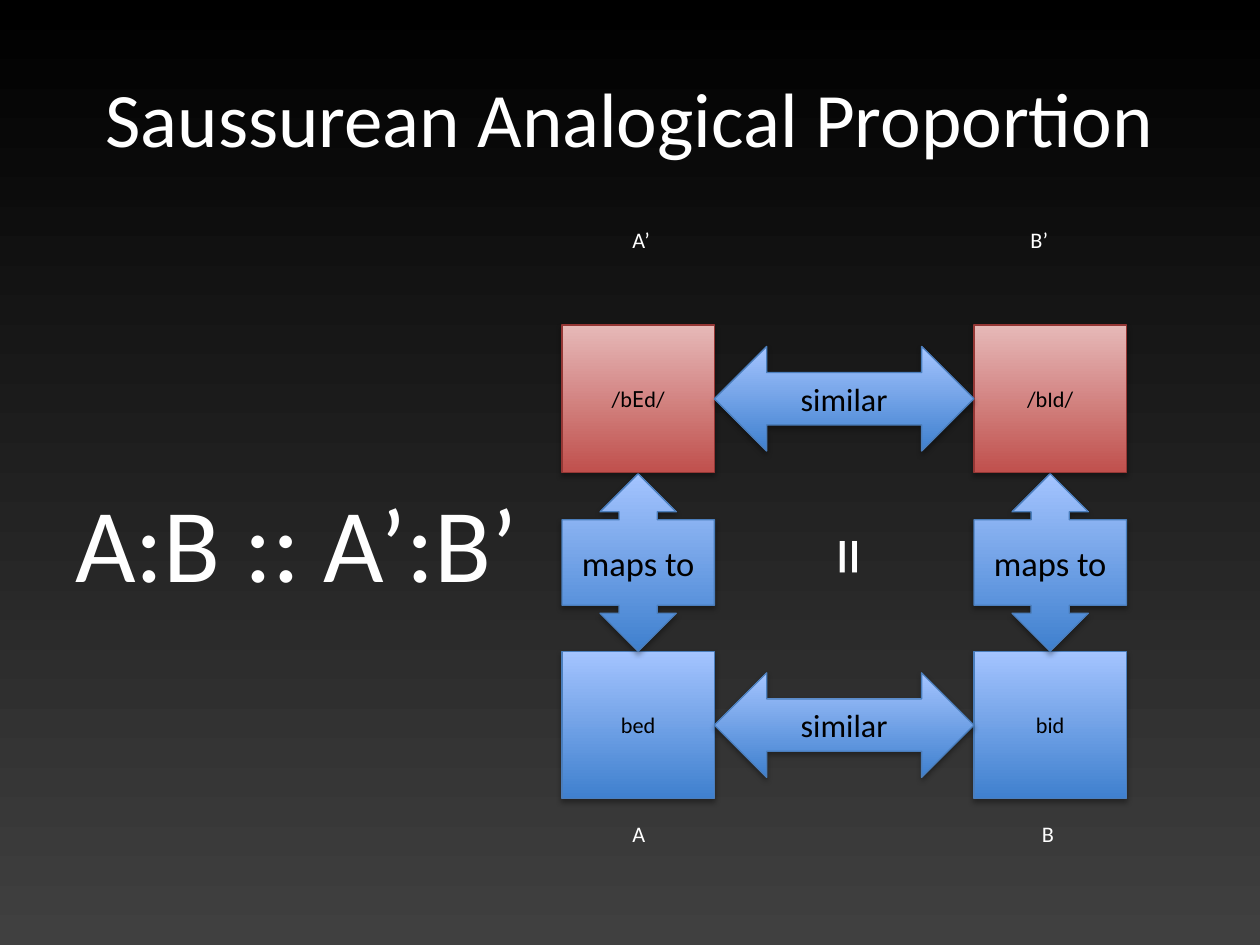
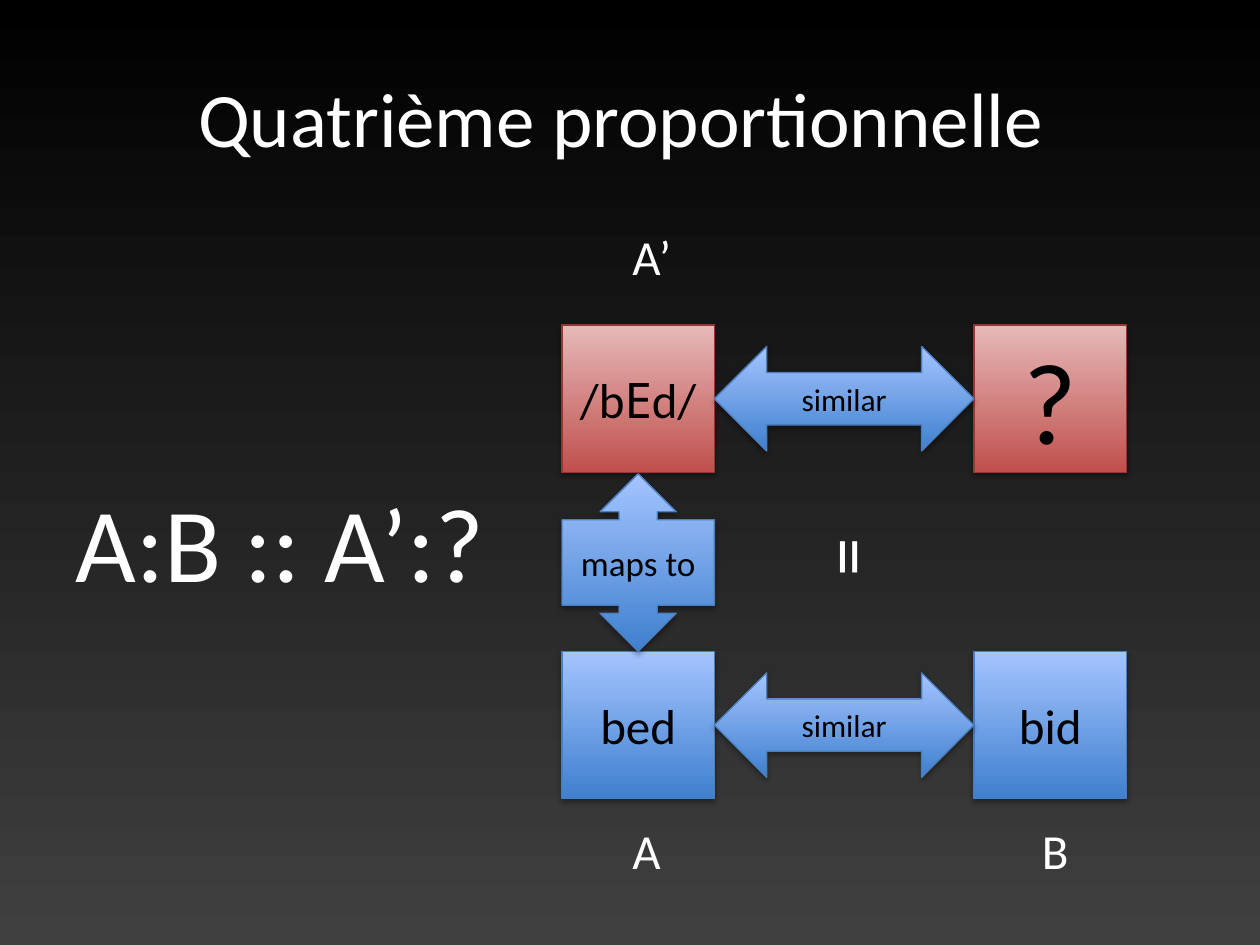
"""Two slides on analogical proportion, each with a square of mapped forms."""
from lxml import etree
from pptx import Presentation
from pptx import util as u
from pptx.dml.color import RGBColor
from pptx.enum import shapes, text
from pptx.oxml.ns import qn

INK = {
    "white": "FFFFFF", "black": "000000", "gray": "404040",
    "blue": "3F80CE", "sky": "A4C4FF", "edge": "4B7EBC",
    "red": "C0504D", "rose": "E6B9B8", "rust": "953735",
}
BLUE = ("blue", "sky", "edge")
RED = ("red", "rose", "rust")
FONT, ALT = "Calibri", "Noto Sans"
KIND = shapes.MSO_SHAPE
SIDE, TALL = 1.21, 1.17
GAP, RISE = 2.06, 1.42
BED = ("/b", ("E", ALT), "d/")


def ink(name):
    """Return the named colour."""
    return RGBColor.from_string(INK[name])


def shade(fill, low, high):
    """Blend a fill from low at the bottom to high at the top."""
    fill.gradient()
    fill.gradient_angle = 90
    for stop, name in zip(fill.gradient_stops, (low, high)):
        stop.color.rgb = ink(name)


def write(shape, words, size=18, color="white", align="CENTER", anchor="MIDDLE",
          wrap=True, top=0.05, vert=None):
    """Fill a shape with one paragraph of words, or of (words, font) runs."""
    frame = shape.text_frame
    frame.word_wrap = wrap
    frame.vertical_anchor = getattr(text.MSO_ANCHOR, anchor)
    frame.margin_top = u.Inches(top)
    if vert:
        frame._txBody.bodyPr.set("vert", vert)
    para = frame.paragraphs[0]
    para.alignment = getattr(text.PP_ALIGN, align)
    for part in [words] if isinstance(words, str) else words:
        run = para.add_run()
        run.text, run.font.name = (part, FONT) if isinstance(part, str) else part
        run.font.size = u.Pt(size)
        run.font.color.rgb = ink(color)


def label(slide, box, words, **form):
    """Place a text box."""
    write(slide.shapes.add_textbox(*map(u.Inches, box)), words, **form)


def drop(shape):
    """Give a shape a soft shadow below it."""
    shape.shadow.inherit = False
    glow = etree.SubElement(
        shape._element.spPr.find(qn("a:effectLst")), qn("a:outerShdw"),
        blurRad=str(u.Pt(3.1)), dist=str(u.Pt(1.8)), dir="5400000", rotWithShape="0")
    tint = etree.SubElement(glow, qn("a:srgbClr"), val=INK["black"])
    etree.SubElement(tint, qn("a:alpha"), val="35000")


def block(slide, kind, box, words, size, look=BLUE):
    """Place a shaded shape with black words."""
    shape = slide.shapes.add_shape(kind, *map(u.Inches, box))
    low, high, edge = look
    shade(shape.fill, low, high)
    shape.line.color.rgb = ink(edge)
    shape.line.width = u.Pt(0.75)
    drop(shape)
    write(shape, words, size=size, color="black")


def square(slide, left, top, forms, sizes, maps):
    """Draw the four forms, the arrows between them and the equals sign."""
    cols = [left, left + SIDE + GAP]
    rows = [top, top + TALL + RISE]
    for y, row, look in zip(rows, forms, (RED, BLUE)):
        for x, (words, size) in zip(cols, row):
            block(slide, KIND.RECTANGLE, (x, y, SIDE, TALL), words, size, look)
    for x in cols[:maps]:
        block(slide, KIND.UP_DOWN_ARROW_CALLOUT,
              (x, top + TALL + 0.01, SIDE, RISE - 0.01), "maps to", sizes["map"])
    for y in rows:
        block(slide, KIND.LEFT_RIGHT_ARROW,
              (left + SIDE, y + 0.17, GAP, 0.83), "similar", sizes["like"])
    label(slide, (left + 1.75, top + 1.42, 0.95, 0.84), "=",
          size=sizes["same"], vert="vert270")


def names(slide, left, top, tags, size, high):
    """Label the corners of the square."""
    for words, x, y, wide in tags:
        label(slide, (left + x, top + y, wide, high), words, size=size,
              align="LEFT", anchor="TOP", wrap=False)


def page(deck, title, ratio, size):
    """Add a slide with its backdrop, title and ratio."""
    slide = deck.slides.add_slide(deck.slide_layouts[6])
    shade(slide.background.fill, "gray", "black")
    label(slide, (0.5, 0.3, 9, 1.25), title, size=44)
    label(slide, (0.5, 1.75, 9, 5.2), ratio, size=size,
          align="LEFT", anchor="TOP", top=2.04)
    return slide


def main():
    """Build and save the deck."""
    deck = Presentation()
    deck.slide_width, deck.slide_height = u.Inches(10), u.Inches(7.5)
    left, top = 4.46, 2.58
    over, under = -0.83, 3.88

    slide = page(deck, "Saussurean Analogical Proportion", "A:B :: A’:B’", 59.8)
    small = 12.7
    forms = [[(BED, small), ("/bId/", small)], [("bed", small), ("bid", small)]]
    square(slide, left, top, forms, {"map": 19.7, "like": 18.3, "same": 44.3}, 2)
    tags = [("A", 0.46, under, 0.31), ("B", 3.71, under, 0.3),
            ("A’", 0.46, over, 0.34), ("B’", 3.62, over, 0.34)]
    names(slide, left, top, tags, small, 0.31)

    slide = page(deck, "Quatrième proportionnelle ", "A:B :: A’:?", 60)
    large = 28
    forms = [[(BED, large), ("?", 66)], [("bed", large), ("bid", large)]]
    square(slide, left, top, forms, {"map": 20, "like": 18, "same": 44}, 1)
    tags = [("A’", 0.46, over, 0.52), ("A", 0.46, under, 0.43),
            ("B", 3.71, under, 0.43)]
    names(slide, left, top, tags, large, 0.57)

    deck.save("out.pptx")


if __name__ == "__main__":
    main()
